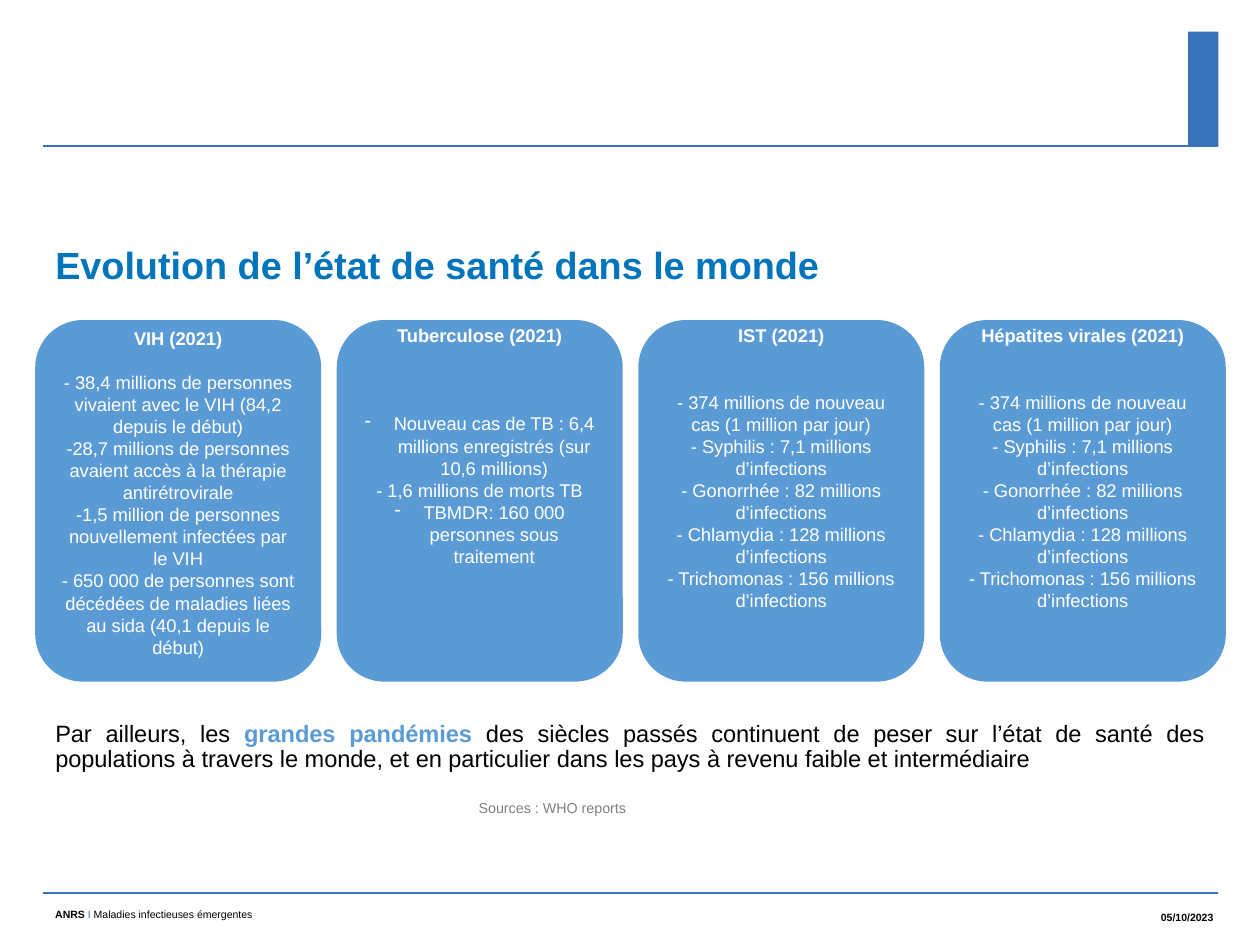
from lxml.etree import SubElement
from pptx import Presentation
from pptx.dml.color import RGBColor
from pptx.enum.shapes import MSO_CONNECTOR, MSO_SHAPE
from pptx.enum.text import MSO_ANCHOR, PP_ALIGN
from pptx.oxml.ns import qn
from pptx.util import Inches, Pt

BLACK, WHITE, GREY = "000000", "FFFFFF", "808080"
RULE_BLUE, TITLE_BLUE, CARD_BLUE = "3873BA", "0075BC", "5B9BD5"
LINE_HEIGHT = 12.6  # points, one line of card text

STI_FACTS = [
    "- 374 millions de nouveau cas (1 million par jour)",
    "- Syphilis : 7,1 millions d’infections",
    "- Gonorrhée : 82 millions d’infections",
    "- Chlamydia : 128 millions d’infections",
    "- Trichomonas : 156 millions d’infections",
]
# heading, free lines under the heading, free lines at the bottom, facts
CARDS = [
    ("VIH (2021)", 1, 0.75, [
        "- 38,4 millions de personnes vivaient avec le VIH (84,2 depuis le début)",
        "-28,7 millions de personnes avaient accès à la thérapie antirétrovirale",
        "-1,5 million de personnes nouvellement infectées par le VIH",
        "- 650 000 de personnes sont décédées de maladies liées au sida (40,1 depuis le début)",
    ]),
    ("Tuberculose (2021)", 3, 5, [
        ("-", "Nouveau cas de TB : 6,4 millions enregistrés (sur 10,6 millions)"),
        "- 1,6 millions de morts TB",
        ("-", "TBMDR: 160 000 personnes sous traitement"),
    ]),
    ("IST (2021)", 2, 3, STI_FACTS),
    ("Hépatites virales (2021)", 2, 3, STI_FACTS),
]


def color(hex_value):
    return RGBColor.from_string(hex_value)


class SlideBuilder:
    font_name = "Arial"

    def __init__(self, slide):
        self.slide = slide

    def set_values(self, target, values):
        for name, value in values.items():
            setattr(target, name, value)

    def span(self, para, text, size, hex_value, bold=False):
        span = para.add_run()
        span.text = text
        values = {"name": self.font_name, "size": Pt(size), "bold": bold}
        self.set_values(span.font, values)
        span.font.color.rgb = color(hex_value)

    def bullet(self, para, character):
        properties = para._p.get_or_add_pPr()
        properties.set("marL", str(Inches(0.23)))
        properties.set("indent", str(Inches(-0.23)))
        SubElement(properties, qn("a:buChar"), char=character)

    def shape(self, kind, place, fill):
        shape = self.slide.shapes.add_shape(kind, *map(Inches, place))
        shape.shadow.inherit = False
        shape.fill.solid()
        shape.fill.fore_color.rgb = color(fill)
        shape.line.fill.background()
        return shape

    def rule(self, left, right, top):
        rule = self.slide.shapes.add_connector(
            MSO_CONNECTOR.STRAIGHT, *map(Inches, (right, top, left, top)))
        rule.line.color.rgb = color(RULE_BLUE)
        rule.line.width = Pt(1)
        SubElement(rule._element.spPr, qn("a:effectLst"))

    def text(self, place, spans, frame_values=None, para_values=None):
        box = self.slide.shapes.add_textbox(*map(Inches, place))
        self.set_values(box.text_frame, {"word_wrap": True, **(frame_values or {})})
        para = box.text_frame.paragraphs[0]
        self.set_values(para, para_values or {})
        for span in spans:
            self.span(para, *span)

    def card(self, place, heading, lines_above, lines_below, facts):
        frame = self.shape(MSO_SHAPE.ROUNDED_RECTANGLE, place, CARD_BLUE).text_frame
        self.set_values(frame, {
            "word_wrap": True,
            "vertical_anchor": MSO_ANCHOR.MIDDLE,
            "margin_bottom": Inches(0.05) + Pt(LINE_HEIGHT * lines_below),
        })
        para = frame.paragraphs[0]
        para.alignment = PP_ALIGN.CENTER
        self.span(para, heading, 10.5, WHITE, True)
        for index, fact in enumerate(facts):
            para = frame.add_paragraph()
            para.alignment = PP_ALIGN.CENTER
            if index == 0:
                para.space_before = Pt(LINE_HEIGHT * lines_above)
            if isinstance(fact, tuple):
                character, fact = fact
                self.bullet(para, character)
            self.span(para, fact, 10.5, WHITE)


def main():
    deck = Presentation()
    deck.slide_width, deck.slide_height = Inches(10), Inches(7.5)
    page = SlideBuilder(deck.slides.add_slide(deck.slide_layouts[6]))

    page.shape(MSO_SHAPE.RECTANGLE, (9.43, 0.25, 0.24, 0.91), RULE_BLUE)
    for top in (1.16, 7.09):
        page.rule(0.34, 9.67, top)

    page.text((0.34, 7.16, 1.94, 0.2), [
        ("ANRS ", 6, BLACK, True),
        ("I", 6, RULE_BLUE),
        (" Maladies infectieuses émergentes", 6, BLACK),
    ])
    page.text(
        (8.15, 7.15, 1.55, 0.26), [("05/10/2023", 6, BLACK, True)],
        {"vertical_anchor": MSO_ANCHOR.MIDDLE,
         "margin_left": Inches(0.07), "margin_right": Inches(0.07),
         "margin_top": Inches(0.04), "margin_bottom": Inches(0.04)},
        {"alignment": PP_ALIGN.RIGHT})

    page.text(
        (0.34, 1.93, 9.32, 0.38),
        [("Evolution de l’état de santé dans le monde", 21.6, TITLE_BLUE, True)],
        {"vertical_anchor": MSO_ANCHOR.MIDDLE}, {"line_spacing": 0.9})

    for column, card in enumerate(CARDS):
        page.card((0.28 + 2.393 * column, 2.54, 2.27, 2.87), *card)

    page.text(
        (0.34, 5.68, 9.32, 0.57),
        [("Par ailleurs, les ", 13.5, BLACK),
         ("grandes pandémies ", 13.5, CARD_BLUE, True),
         ("des siècles passés continuent de peser sur l’état de santé des "
          "populations à travers le monde, et en particulier dans les pays "
          "à revenu faible et intermédiaire", 13.5, BLACK)],
        para_values={"alignment": PP_ALIGN.JUSTIFY, "line_spacing": 0.9})
    page.text((3.7, 6.29, 3.42, 0.24), [("Sources : WHO reports", 8.2, GREY)])

    deck.save("out.pptx")


if __name__ == "__main__":
    main()
